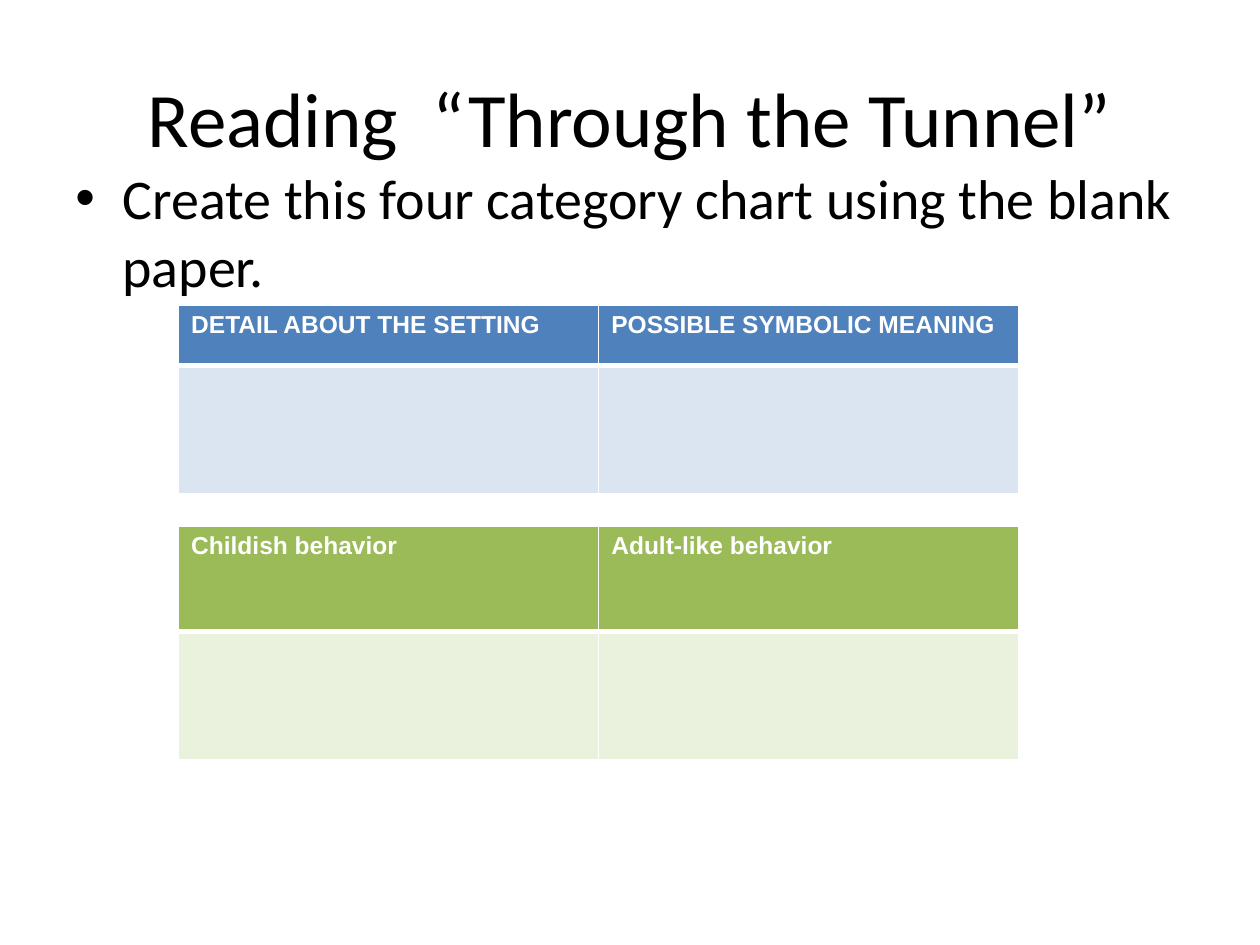
from lxml import etree
from pptx import Presentation
from pptx.dml.color import RGBColor
from pptx.enum.text import MSO_ANCHOR, PP_ALIGN
from pptx.oxml.ns import qn
from pptx.util import Cm, Pt

CENTER = PP_ALIGN.CENTER
MIDDLE = MSO_ANCHOR.MIDDLE
TITLE_ONLY = 5

BLACK = RGBColor(0x00, 0x00, 0x00)
WHITE = RGBColor(0xFF, 0xFF, 0xFF)
BLUE = RGBColor(0x4F, 0x81, 0xBD)
PALE_BLUE = RGBColor(0xDB, 0xE5, 0xF1)
GREEN = RGBColor(0x9B, 0xBB, 0x59)
PALE_GREEN = RGBColor(0xEA, 0xF1, 0xDD)


def set_font(p, name, size, color, bold=False):
    p.font.name = name
    p.font.size = Pt(size)
    p.font.color.rgb = color
    p.font.bold = bold


def set_borders(cell, **widths):
    """Draw white cell borders; widths in points, keyed L, R, T, B."""
    tcPr = cell._tc.get_or_add_tcPr()
    for side, width in widths.items():
        ln = etree.SubElement(tcPr, qn(f"a:ln{side}"), w=str(Pt(width)))
        fill = etree.SubElement(ln, qn("a:solidFill"))
        etree.SubElement(fill, qn("a:srgbClr"), val=str(WHITE))


prs = Presentation()
prs.slide_width, prs.slide_height = Cm(25.4), Cm(19.05)
s = prs.slides.add_slide(prs.slide_layouts[TITLE_ONLY])

# Title
title = s.shapes.title
title.left, title.top, title.width, title.height = Cm(1.27), Cm(0.76), Cm(22.86), Cm(3.18)
tf = title.text_frame
tf.text = "Reading  “Through the Tunnel”"
tf.vertical_anchor = MIDDLE
p = tf.paragraphs[0]
p.alignment = CENTER
set_font(p, "Calibri", 44, BLACK)

# Bulleted instruction
instruction = s.shapes.add_textbox(Cm(1.27), Cm(3.18), Cm(22.86), Cm(13.84))
tf = instruction.text_frame
tf.word_wrap = True
p = tf.paragraphs[0]
p.text = "Create this four category chart using the blank paper."
set_font(p, "Calibri", 32, BLACK)
pPr = p._p.get_or_add_pPr()
pPr.set("marL", str(Cm(0.95)))
pPr.set("indent", str(-Cm(0.95)))
bullet_font = etree.Element(qn("a:buFont"), typeface="Arial")
bullet = etree.Element(qn("a:buChar"), char="•")
pPr.insert(0, bullet_font)
pPr.insert(1, bullet)

# Category charts: top, header height, header colour, body colour, headings
charts = [
    (6.15, 1.22, BLUE, PALE_BLUE,
     ["DETAIL ABOUT THE SETTING", "POSSIBLE SYMBOLIC MEANING"]),
    (10.6, 2.13, GREEN, PALE_GREEN,
     ["Childish behavior", "Adult-like behavior"]),
]
BODY_HEIGHT = 2.58

for top, header_height, header_color, body_color, headings in charts:
    table = s.shapes.add_table(2, 2, Cm(3.6), Cm(top), Cm(16.94),
                               Cm(header_height + BODY_HEIGHT)).table
    table.rows[0].height = Cm(header_height)
    table.rows[1].height = Cm(BODY_HEIGHT)
    for col, heading in enumerate(headings):
        header, body = table.cell(0, col), table.cell(1, col)
        set_borders(header, L=1, R=1, T=1, B=3)
        set_borders(body, L=1, R=1, T=3, B=1)
        for cell, color in ((header, header_color), (body, body_color)):
            cell.fill.solid()
            cell.fill.fore_color.rgb = color
        header.text = heading
        set_font(header.text_frame.paragraphs[0], "Arial", 14, WHITE, bold=True)

prs.save("out.pptx")
